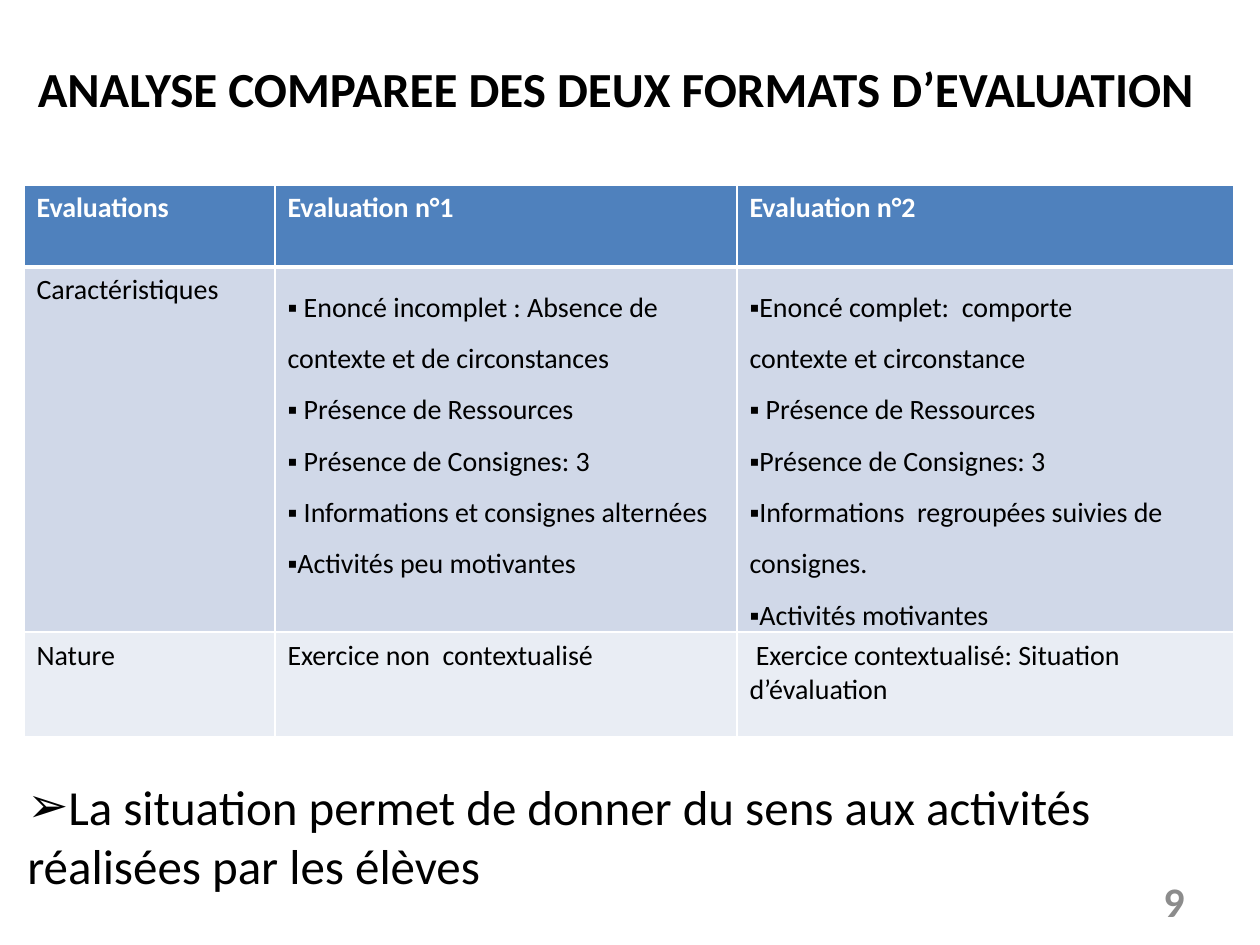
from lxml.etree import SubElement
from pptx import Presentation
from pptx.dml.color import RGBColor
from pptx.enum.text import MSO_ANCHOR, PP_ALIGN
from pptx.oxml.ns import qn
from pptx.util import Pt

PX = 914400 / 126
BLACK = RGBColor(0, 0, 0)
WHITE = RGBColor(255, 255, 255)
GRAY = RGBColor(0x8C, 0x8C, 0x8C)
BLUE = RGBColor(0x4F, 0x81, 0xBD)
BAND = RGBColor(0xD0, 0xD8, 0xE8)
PALE = RGBColor(0xE9, 0xED, 0xF4)


def px(*values):
    return [round(value * PX) for value in values]


def write(para, text, size, color=BLACK, bold=False, bullet=None):
    if bullet:
        properties = para._p.get_or_add_pPr()
        properties.set("marL", "0")
        properties.set("indent", "0")
        SubElement(properties, qn("a:buFont"), typeface="Arial")
        SubElement(properties, qn("a:buChar"), char=bullet)
    span = para.add_run()
    span.text = text
    span.font.name = "Calibri"
    span.font.size = Pt(size)
    span.font.bold = bold
    span.font.color.rgb = color


deck = Presentation()
deck.slide_width, deck.slide_height = px(1260, 945)
page = deck.slides.add_slide(deck.slide_layouts[6])

texts = [
    ((1096, 876, 101, 50), "9", 24, GRAY, True, None, PP_ALIGN.RIGHT, MSO_ANCHOR.MIDDLE),
    ((15, 52, 1201, 72), "ANALYSE COMPAREE DES DEUX FORMATS D’EVALUATION",
     28, BLACK, True, None, PP_ALIGN.CENTER, MSO_ANCHOR.TOP),
    ((15, 770, 1211, 131),
     "La situation permet de donner du sens aux activités réalisées par les élèves",
     28, BLACK, False, "➢", PP_ALIGN.LEFT, MSO_ANCHOR.TOP),
]
for place, text, size, color, bold, bullet, align, anchor in texts:
    box = page.shapes.add_textbox(*px(*place))
    box.text_frame.word_wrap = True
    box.text_frame.vertical_anchor = anchor
    para = box.text_frame.paragraphs[0]
    para.alignment = align
    write(para, text, size, color, bold, bullet)

rows = [
    (82, BLUE, [["Evaluations"], ["Evaluation n°1"], ["Evaluation n°2"]]),
    (365, BAND, [
        ["Caractéristiques"],
        ["▪ Enoncé incomplet : Absence de contexte et de circonstances",
         "▪ Présence de Ressources",
         "▪ Présence de Consignes: 3",
         "▪ Informations et consignes alternées",
         "▪Activités peu motivantes"],
        ["▪Enoncé complet:  comporte",
         "contexte et circonstance",
         "▪ Présence de Ressources",
         "▪Présence de Consignes: 3",
         "▪Informations  regroupées suivies de  consignes.",
         "▪Activités motivantes"],
    ]),
    (105, PALE, [["Nature"], ["Exercice non  contextualisé"],
                 [" Exercice contextualisé: Situation d’évaluation"]]),
]
widths = px(251, 462, 497)
table = page.shapes.add_table(3, 3, *px(24, 185, 1210, 552)).table
for column, width in zip(table.columns, widths):
    column.width = width

for row_index, (height, fill, contents) in enumerate(rows):
    table.rows[row_index].height = px(height)[0]
    header = row_index == 0
    for column_index, lines in enumerate(contents):
        cell = table.cell(row_index, column_index)
        for line_index, line in enumerate(lines):
            frame = cell.text_frame
            para = frame.add_paragraph() if line_index else frame.paragraphs[0]
            if len(lines) > 1:
                para.line_spacing = 1.5
            bullet = "▪" if line.startswith("▪") else None
            write(para, line.removeprefix("▪"), 16,
                  WHITE if header else BLACK, header, bullet)
        properties = cell._tc.get_or_add_tcPr()
        for side in ("lnL", "lnR", "lnT", "lnB"):
            thick = (header and side == "lnB") or (row_index == 1 and side == "lnT")
            border = SubElement(properties, qn("a:" + side), w=str(Pt(3 if thick else 1)))
            paint = SubElement(border, qn("a:solidFill"))
            SubElement(paint, qn("a:srgbClr"), val=str(WHITE))
        cell.fill.solid()
        cell.fill.fore_color.rgb = fill

deck.save("out.pptx")
